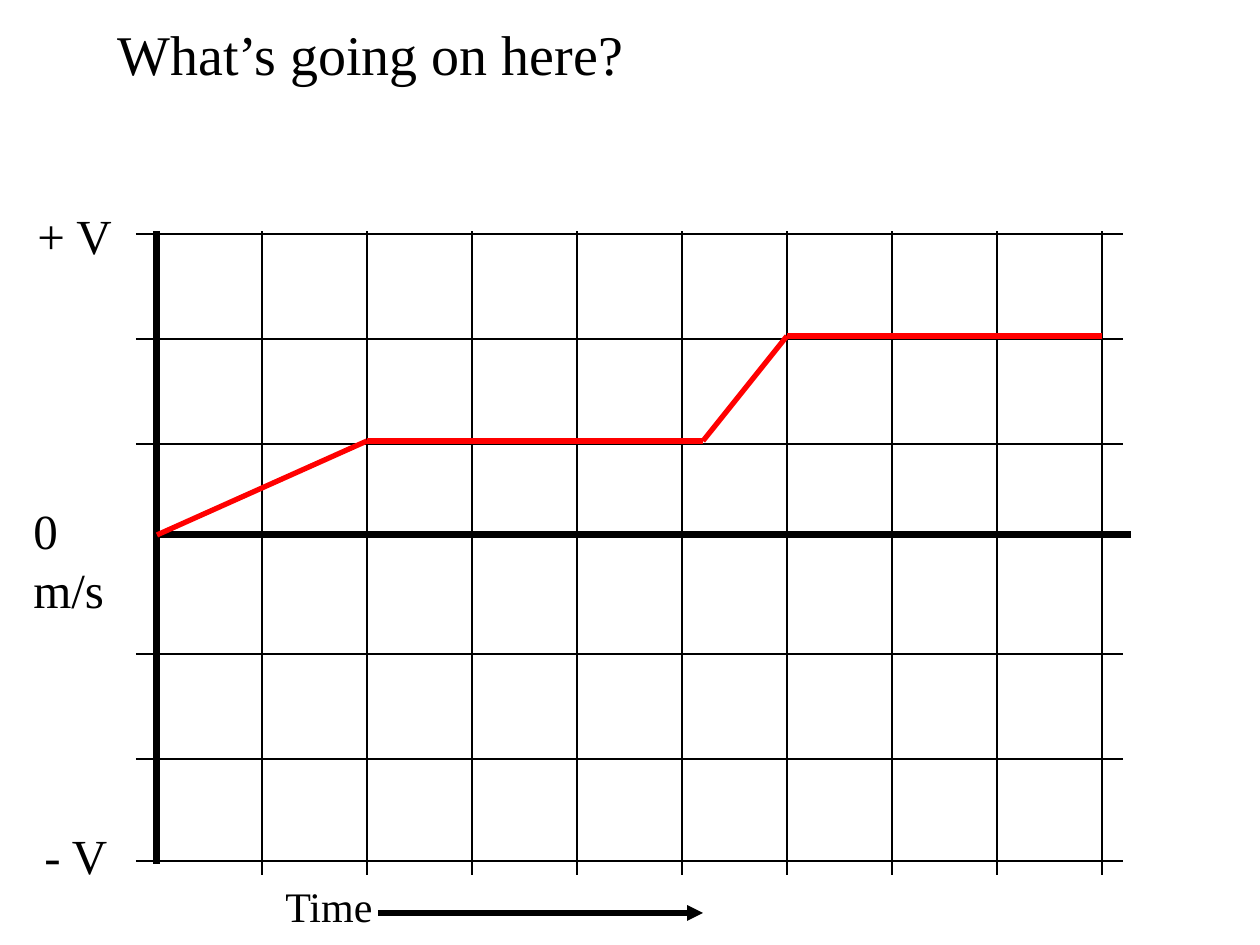
import itertools

import lxml.etree
import pptx
import pptx.dml.color
import pptx.enum.shapes
import pptx.enum.text
import pptx.oxml.ns
import pptx.util

PX = 914400 // 126
FONT = "Times New Roman"
BLACK, RED = "000000", "FF0000"
STEP = 105


def px(n):
    return pptx.util.Emu(n * PX)


def rgb(value):
    return pptx.dml.color.RGBColor.from_string(value)


def add_line(slide, start, end, width, color=BLACK, arrow=False):
    line = slide.shapes.add_connector(
        pptx.enum.shapes.MSO_CONNECTOR.STRAIGHT,
        *(px(n) for n in (*start, *end)))
    line.line.width = pptx.util.Pt(width)
    line.line.color.rgb = rgb(color)
    qn = pptx.oxml.ns.qn
    sp_pr = line._element.spPr
    if arrow:
        lxml.etree.SubElement(sp_pr.find(qn("a:ln")), qn("a:tailEnd"),
                              type="triangle")
    lxml.etree.SubElement(sp_pr, qn("a:effectLst"))


def set_text(sp, text, size):
    tf = sp.text_frame
    tf.text = text
    tf.word_wrap = False
    tf.auto_size = pptx.enum.text.MSO_AUTO_SIZE.SHAPE_TO_FIT_TEXT
    tf.vertical_anchor = pptx.enum.text.MSO_ANCHOR.TOP
    p = tf.paragraphs[0]
    p.alignment = pptx.enum.text.PP_ALIGN.LEFT
    p.line_spacing = 1.0
    p.space_before = pptx.util.Pt(0)
    font = p.runs[0].font
    font.name = FONT
    font.size = pptx.util.Pt(size)
    font.color.rgb = rgb(BLACK)


def add_label(slide, box, text, size):
    set_text(slide.shapes.add_textbox(*(px(n) for n in box)), text, size)


def add_title(slide, box, text):
    title = slide.shapes.title
    title.left, title.top, title.width, title.height = (px(n) for n in box)
    set_text(title, text, 32)


def add_graph(slide, left, top, width, height):
    """Draw the velocity graph, with its origin on the left edge of the box."""
    zero = top + 301
    bottom = top + height
    add_line(slide, (left, top - 3), (left, bottom + 3), 4)
    add_line(slide, (left - 2, zero), (left + width + 29, zero), 4)

    for x in range(left + STEP, left + width + 1, STEP):
        add_line(slide, (x, bottom + 14), (x, top - 3), 1)
    rows = [top + STEP * i for i in (0, 1, 2, 4, 5)] + [bottom]
    for y in rows:
        add_line(slide, (left - 21, y), (left + width + 21, y), 1)

    slow, fast = top + 2 * STEP - 3, top + STEP - 3
    velocity = [(left, zero), (left + 2 * STEP, slow), (left + 546, slow),
                (left + 6 * STEP, fast), (left + width, fast)]
    for start, end in itertools.pairwise(velocity):
        add_line(slide, start, end, 3, RED)

    add_label(slide, (left - 132, top - 35, 101, 72), "+ V", 28)
    add_label(slide, (left - 136, zero - 41, 132, 72), "0 m/s", 28)
    add_label(slide, (left - 125, bottom - 42, 89, 72), "- V", 28)


def add_time_arrow(slide, left, top, width, height):
    add_label(slide, (left, top, 113, height), "Time", 24)
    y = top + 39
    add_line(slide, (left + 105, y), (left + width, y), 3, arrow=True)


def main():
    prs = pptx.Presentation()
    prs.slide_width, prs.slide_height = px(1260), px(945)
    slide = prs.slides.add_slide(prs.slide_layouts[5])
    add_title(slide, (105, 13, 534, 79), "What’s going on here?")
    add_graph(slide, 157, 234, 9 * STEP, 627)
    add_time_arrow(slide, 273, 874, 430, 63)
    prs.save("out.pptx")


if __name__ == "__main__":
    main()
